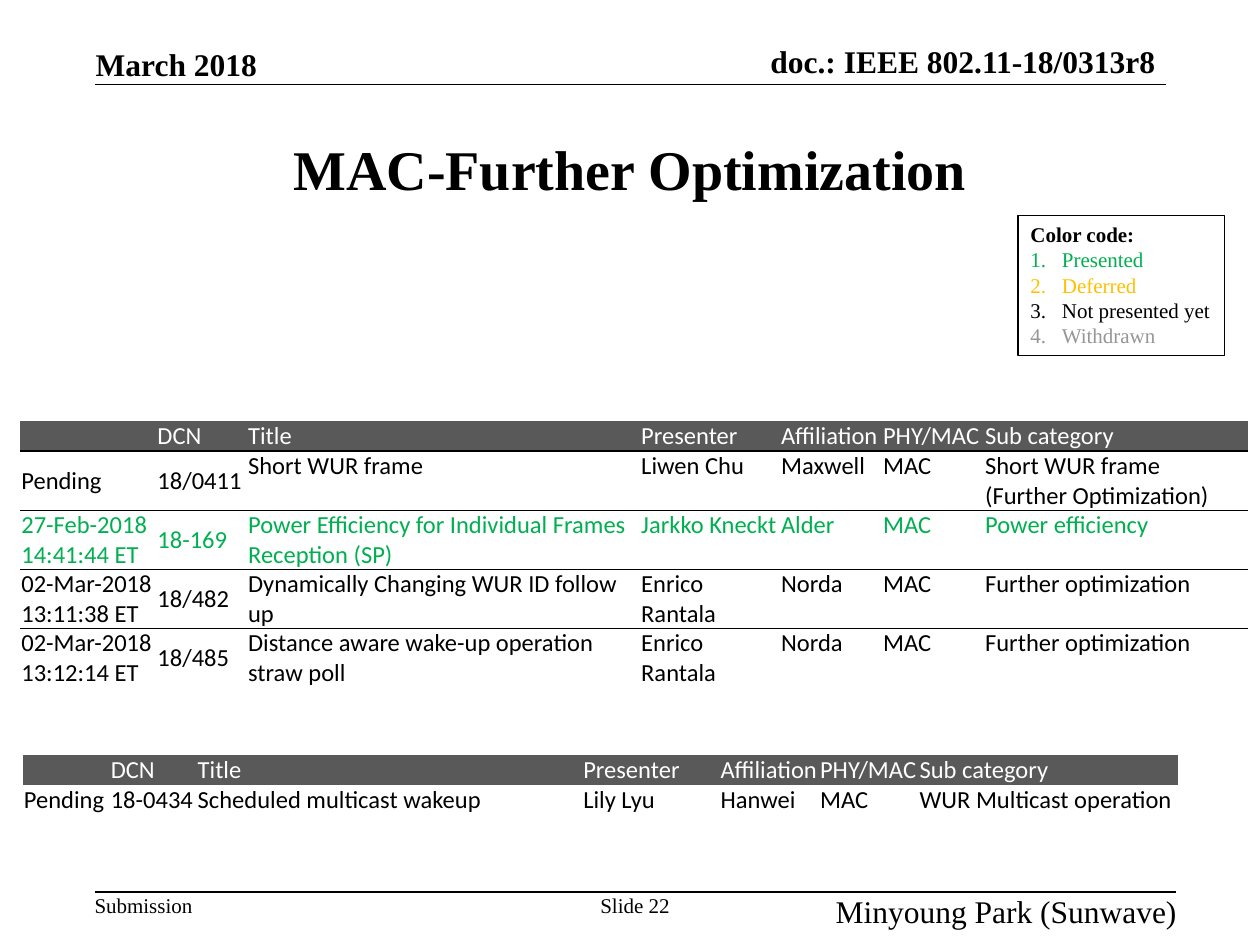
from pptx import Presentation
from pptx.dml.color import RGBColor
from pptx.enum.shapes import MSO_CONNECTOR, MSO_SHAPE
from pptx.enum.text import MSO_ANCHOR, PP_ALIGN
from pptx.oxml.ns import qn
from pptx.util import Inches, Pt
from lxml import etree

LEFT, MID, RIGHT = PP_ALIGN.LEFT, PP_ALIGN.CENTER, PP_ALIGN.RIGHT
TOP, CENTER, BOTTOM = MSO_ANCHOR.TOP, MSO_ANCHOR.MIDDLE, MSO_ANCHOR.BOTTOM
LINE, RECT = MSO_CONNECTOR.STRAIGHT, MSO_SHAPE.RECTANGLE
HEX = {"black": "000000", "white": "FFFFFF", "green": "00B050",
       "gold": "FFC000", "gray": "969696", "head": "595959"}
SERIF, SANS = "Times New Roman", "Calibri"


def write(par, text, size=12, color="black", bold=False, face=SERIF, align=LEFT):
    par.alignment = align
    if not text:
        etree.SubElement(par._p, qn("a:endParaRPr"), sz=str(size * 100))
        return
    run = par.add_run()
    run.text = text
    font = run.font
    font.size, font.bold, font.name = Pt(size), bold, face
    font.color.rgb = RGBColor.from_string(HEX[color])


def edge(cell, side, show):
    props = cell._tc.get_or_add_tcPr()
    line = etree.SubElement(props, qn("a:" + side), w=str(Pt(1)))
    if show:
        fill = etree.SubElement(line, qn("a:solidFill"))
        etree.SubElement(fill, qn("a:srgbClr"), val=HEX["black"])
    else:
        etree.SubElement(line, qn("a:noFill"))


deck = Presentation()
deck.slide_width, deck.slide_height = Inches(10), Inches(7.5)
slide = deck.slides.add_slide(deck.slide_layouts[5])
shapes = slide.shapes

title = shapes.title
title.left, title.top = Inches(0.75), Inches(0.75)
title.width, title.height = Inches(8.5), Inches(1.17)
title.text_frame.vertical_anchor = CENTER
write(title.text_frame.paragraphs[0], "MAC-Further Optimization",
      size=32, bold=True, align=MID)

for y, end in ((0.67, 9.25), (7.08, 9.33)):
    rule = shapes.add_connector(LINE, Inches(0.75), Inches(y), Inches(end), Inches(y))
    rule.line.color.rgb = RGBColor.from_string(HEX["black"])
    rule.line.width = Pt(1)
    etree.SubElement(rule._element.spPr, qn("a:effectLst"))

labels = [
    ("March 2018", 0.76, 0.36, 1.47, 0.3, BOTTOM, LEFT, 18, True),
    ("doc.: IEEE 802.11-18/0313r8", 5.58, 0.33, 3.59, 0.3, BOTTOM, RIGHT, 18, True),
    ("Submission", 0.75, 7.08, 0.78, 0.2, TOP, LEFT, 12, False),
    ("Slide 22", 4.75, 7.08, 0.58, 0.2, TOP, MID, 12, False),
    ("Minyoung Park (Sunwave)", 6.33, 7.08, 3.01, 0.2, TOP, RIGHT, 18, False),
]
for text, x, y, w, h, anchor, align, size, bold in labels:
    box = shapes.add_textbox(Inches(x), Inches(y), Inches(w), Inches(h))
    frame = box.text_frame
    frame.margin_left = frame.margin_right = frame.margin_top = frame.margin_bottom = 0
    frame.vertical_anchor = anchor
    frame.word_wrap = False
    write(frame.paragraphs[0], text, size=size, bold=bold, align=align)

key = shapes.add_shape(RECT, Inches(8.08), Inches(1.71), Inches(1.64), Inches(1.11))
key.shadow.inherit = False
key.fill.background()
key.line.color.rgb = RGBColor.from_string(HEX["black"])
key.line.width = Pt(0.75)
frame = key.text_frame
frame.word_wrap = False
frame.vertical_anchor = TOP
write(frame.paragraphs[0], "Color code:", bold=True)
codes = [("Presented", "green"), ("Deferred", "gold"),
         ("Not presented yet", "black"), ("Withdrawn", "gray")]
for text, color in codes:
    par = frame.add_paragraph()
    props = par._p.get_or_add_pPr()
    props.set("marL", str(Inches(0.25)))
    props.set("indent", str(Inches(-0.25)))
    etree.SubElement(props, qn("a:buFont"), typeface="+mj-lt")
    etree.SubElement(props, qn("a:buAutoNum"), type="arabicPeriod")
    write(par, text, color=color)

head = ["", "DCN", "Title", "Presenter", "Affiliation", "PHY/MAC", "Sub category"]
main = [
    head,
    ["Pending", "18/0411", "Short WUR frame", "Liwen Chu", "Maxwell", "MAC",
     "Short WUR frame (Further Optimization)"],
    ["27-Feb-2018 14:41:44 ET", "18-169",
     "Power Efficiency for Individual Frames Reception (SP)",
     "Jarkko Kneckt", "Alder", "MAC", "Power efficiency"],
    ["02-Mar-2018 13:11:38 ET", "18/482", "Dynamically Changing WUR ID follow up",
     "Enrico Rantala", "Norda", "MAC", "Further optimization"],
    ["02-Mar-2018 13:12:14 ET", "18/485",
     "Distance aware wake-up operation straw poll",
     "Enrico Rantala", "Norda", "MAC", "Further optimization"],
]
extra = [
    head,
    ["Pending", "18-0434", "Scheduled multicast wakeup", "Lily Lyu", "Hanwei",
     "MAC", "WUR Multicast operation"],
]
grids = [
    (main, 0.16, 3.34, [1.08, 0.72, 3.12, 1.11, 0.81, 0.81, 2.1], 0.47, True),
    (extra, 0.18, 5.99, [0.69, 0.69, 3.06, 1.09, 0.79, 0.79, 2.06], 0.24, False),
]
for data, x, y, cols, high, ruled in grids:
    tall = [0.24] + [high] * (len(data) - 1)
    table = shapes.add_table(len(data), len(cols), Inches(x), Inches(y),
                             Inches(sum(cols)), Inches(sum(tall))).table
    table.first_row = table.horz_banding = False
    for col, w in zip(table.columns, cols):
        col.width = Inches(w)
    for r, row in enumerate(data):
        table.rows[r].height = Inches(tall[r])
        color = "white" if r == 0 else "green" if "18-169" in row else "black"
        for c, text in enumerate(row):
            cell = table.cell(r, c)
            cell.margin_left = cell.margin_right = Inches(0.01)
            cell.margin_top = cell.margin_bottom = 0
            cell.vertical_anchor = CENTER if c < 2 else TOP
            edge(cell, "lnL", False)
            edge(cell, "lnR", False)
            edge(cell, "lnT", ruled and r > 0)
            edge(cell, "lnB", ruled and r < len(data) - 1)
            if r == 0:
                cell.fill.solid()
                cell.fill.fore_color.rgb = RGBColor.from_string(HEX["head"])
            else:
                cell.fill.background()
            write(cell.text_frame.paragraphs[0], text, size=14, color=color, face=SANS)

deck.save("out.pptx")
